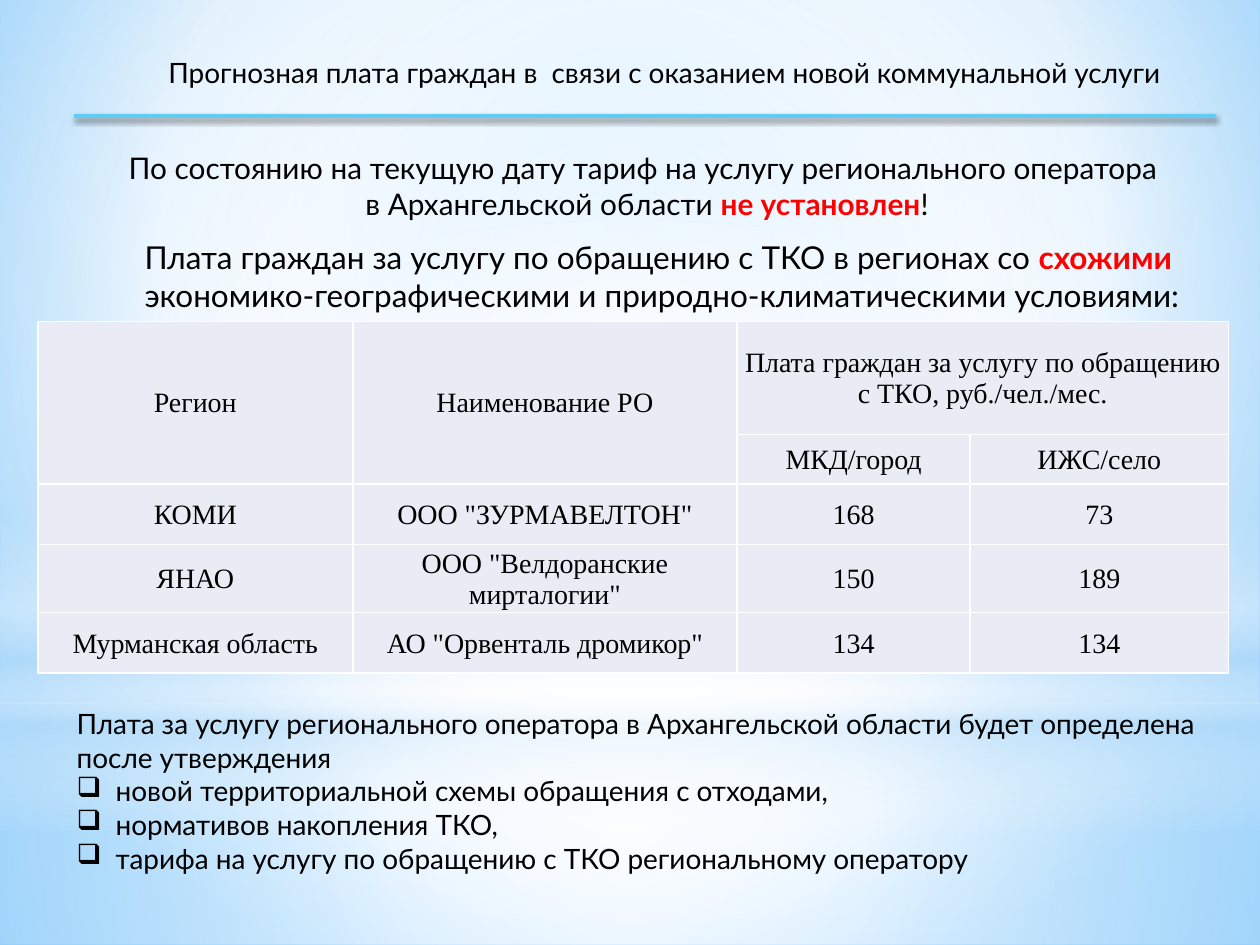
from lxml import etree
from pptx import Presentation
from pptx.dml.color import RGBColor
from pptx.enum import shapes, text
from pptx.oxml import parse_xml
from pptx.oxml.ns import nsdecls, qn
from pptx.util import Inches, Pt

BLACK = RGBColor(0x00, 0x00, 0x00)
RED = RGBColor(0xFF, 0x00, 0x00)
WHITE = RGBColor(0xFF, 0xFF, 0xFF)
CYAN = RGBColor(0x5E, 0xCC, 0xF3)
LAVENDER = RGBColor(0xE9, 0xEB, 0xF5)
HAZE = RGBColor(0xB4, 0xDC, 0xFA)
SKY = RGBColor(0x9E, 0xD5, 0xFF)
AZURE = RGBColor(0x5B, 0xB9, 0xFF)

CENTER = (50, 50, 50, 50)
RECTANGLE = shapes.MSO_SHAPE.RECTANGLE
COLUMNS = (2.5, 3.05, 1.85, 2.05)
ROWS = (0.9, 0.39, 0.48, 0.48, 0.48)
MERGES = ((0, 0, 1, 0), (0, 1, 1, 1), (0, 2, 0, 3))
TARIFFS = (
    ("Регион", "Наименование РО",
     "Плата граждан за услугу по обращению с ТКО, руб./чел./мес.", ""),
    ("", "", "МКД/город", "ИЖС/село"),
    ("КОМИ", "ООО \"ЗУРМАВЕЛТОН\"", "168", "73"),
    ("ЯНАО", "ООО \"Велдоранские мирталогии\"", "150", "189"),
    ("Мурманская область", "АО \"Орвенталь дромикор\"", "134", "134"),
)


def set_gradient(fill, properties, stops, focus=None, angle=0):
    fill.solid()
    marks = "".join(
        f'<a:gs pos="{place * 1000}"><a:srgbClr val="{color}">'
        f'<a:alpha val="{opacity * 1000}"/></a:srgbClr></a:gs>'
        for place, color, opacity in stops)
    if focus:
        sides = " ".join(f'{side}="{value * 1000}"' for side, value in zip("ltrb", focus))
        direction = f'<a:path path="circle"><a:fillToRect {sides}/></a:path>'
    else:
        direction = f'<a:lin ang="{angle * 60000}" scaled="0"/>'
    gradient = parse_xml(f'<a:gradFill {nsdecls("a")} rotWithShape="1">'
                         f'<a:gsLst>{marks}</a:gsLst>{direction}</a:gradFill>')
    properties.replace(properties.find(qn("a:solidFill")), gradient)


def add_glow(page, kind, top, height, stops, **direction):
    glow = page.shapes.add_shape(kind, 0, Inches(top), Inches(10), Inches(height))
    glow.shadow.inherit = False
    glow.line.fill.background()
    set_gradient(glow.fill, glow._element.spPr, stops, **direction)


def add_backdrop(page):
    background = page.background.fill
    background.solid()
    set_gradient(background, page._element.cSld.bg.bgPr,
                 ((0, SKY, 100), (60, WHITE, 100), (100, AZURE, 100)),
                 focus=(20, 10, 20, 60))
    add_glow(page, RECTANGLE, 5.58, 1.92,
             ((0, WHITE, 91), (37, WHITE, 76), (100, HAZE, 79)), focus=CENTER)
    add_glow(page, RECTANGLE, 0, 5.58,
             ((0, WHITE, 89), (48, WHITE, 62), (100, HAZE, 79)), focus=CENTER)
    add_glow(page, RECTANGLE, 4.12, 2.5,
             ((0, WHITE, 0), (29, WHITE, 30), (45, HAZE, 40),
              (55, WHITE, 26), (65, HAZE, 60), (100, WHITE, 0)), angle=90)
    add_glow(page, shapes.MSO_SHAPE.OVAL, 1.75, 5.58,
             ((0, WHITE, 100), (56, WHITE, 0)), focus=CENTER)


def write(para, content, size=16, font="Lato", color=BLACK, bold=False,
          align=text.PP_ALIGN.CENTER, bullet=None):
    para.alignment = align
    for number, line in enumerate(content.split("\n")):
        if number:
            para.add_line_break()
        if line:
            span = para.add_run()
            span.text = line
            span.font.size = Pt(size)
            span.font.name = font
            span.font.bold = bold
            span.font.color.rgb = color
    if bullet:
        properties = para._p.get_or_add_pPr()
        properties.set("marL", str(Inches(0.31)))
        properties.set("indent", str(-Inches(0.31)))
        etree.SubElement(properties, qn("a:buChar")).set("char", bullet)


def prepare_frame(box):
    frame = box.text_frame
    frame.word_wrap = True
    frame.vertical_anchor = text.MSO_ANCHOR.TOP
    frame.auto_size = text.MSO_AUTO_SIZE.SHAPE_TO_FIT_TEXT
    return frame


def add_text(page, left, top, width, height):
    return prepare_frame(page.shapes.add_textbox(
        Inches(left), Inches(top), Inches(width), Inches(height)))


def add_title(page, content):
    title = page.shapes.title
    page.shapes._spTree.append(title._element)
    title.left, title.top = Inches(0.94), Inches(0.39)
    title.width, title.height = Inches(8.67), Inches(0.37)
    write(prepare_frame(title).paragraphs[0], content)


def add_rule(page):
    rule = page.shapes.add_connector(shapes.MSO_CONNECTOR.STRAIGHT, Inches(0.59),
                                     Inches(0.92), Inches(9.65), Inches(0.92))
    rule.line.color.rgb = CYAN
    rule.line.width = Pt(2)
    rule._element.spPr.append(parse_xml(
        f'<a:effectLst {nsdecls("a")}><a:outerShdw blurRad="{Pt(3.1)}" dist="{Pt(1.8)}" '
        f'dir="5400000" rotWithShape="0"><a:srgbClr val="{BLACK}"><a:alpha val="45000"/>'
        '</a:srgbClr></a:outerShdw></a:effectLst>'))


def format_cell(cell, content):
    cell.fill.solid()
    cell.fill.fore_color.rgb = LAVENDER
    cell.vertical_anchor = text.MSO_ANCHOR.MIDDLE
    cell.margin_left = cell.margin_right = cell.margin_top = Inches(0.01)
    cell.margin_bottom = 0
    properties = cell._tc.get_or_add_tcPr()
    for place, side in enumerate("LRTB"):
        properties.insert(place, parse_xml(
            f'<a:ln{side} {nsdecls("a")} w="{Pt(1)}"><a:solidFill>'
            f'<a:srgbClr val="{WHITE}"/></a:solidFill></a:ln{side}>'))
    if content:
        write(cell.text_frame.paragraphs[0], content, font="Times New Roman")


def add_tariff_table(page):
    table = page.shapes.add_table(len(ROWS), len(COLUMNS), Inches(0.3), Inches(2.55),
                                  Inches(sum(COLUMNS)), Inches(sum(ROWS))).table
    table.first_row = table.horz_banding = False
    for column, width in zip(table.columns, COLUMNS):
        column.width = Inches(width)
    for row, height, contents in zip(table.rows, ROWS, TARIFFS):
        row.height = Inches(height)
        for cell, content in zip(row.cells, contents):
            format_cell(cell, content)
    for top, left, bottom, right in MERGES:
        table.cell(top, left).merge(table.cell(bottom, right))


def add_conditions(page):
    frame = add_text(page, 0.51, 5.56, 9.21, 1.48)
    write(frame.paragraphs[0],
          "Плата за услугу регионального оператора в Архангельской области "
          "будет определена после утверждения", align=text.PP_ALIGN.LEFT)
    for condition in ("новой территориальной схемы обращения с отходами,",
                      "нормативов накопления ТКО,",
                      "тарифа на услугу по обращению с ТКО региональному оператору"):
        write(frame.add_paragraph(), condition, align=text.PP_ALIGN.LEFT, bullet="❑")


def add_statement(page, place, size, before, accent, after):
    para = add_text(page, *place).paragraphs[0]
    write(para, before, size=size)
    write(para, accent, size=size, color=RED, bold=True)
    write(para, after, size=size)


def main():
    deck = Presentation()
    deck.slide_width, deck.slide_height = Inches(10), Inches(7.5)
    page = deck.slides.add_slide(deck.slide_layouts[5])
    add_backdrop(page)
    add_title(page, "Прогнозная плата граждан в  связи с оказанием новой коммунальной услуги")
    add_rule(page)
    add_conditions(page)
    add_tariff_table(page)
    add_statement(page, (0.53, 1.14, 9.21, 0.67), 17,
                  "По состоянию на текущую дату тариф на услугу регионального оператора \n"
                  "в Архангельской области ", "не установлен", "!")
    add_statement(page, (0.65, 1.84, 9.21, 0.71), 18,
                  "Плата граждан за услугу по обращению с ТКО в регионах со ", "схожими \n",
                  "экономико-географическими и природно-климатическими условиями:")
    deck.save("out.pptx")


if __name__ == "__main__":
    main()
